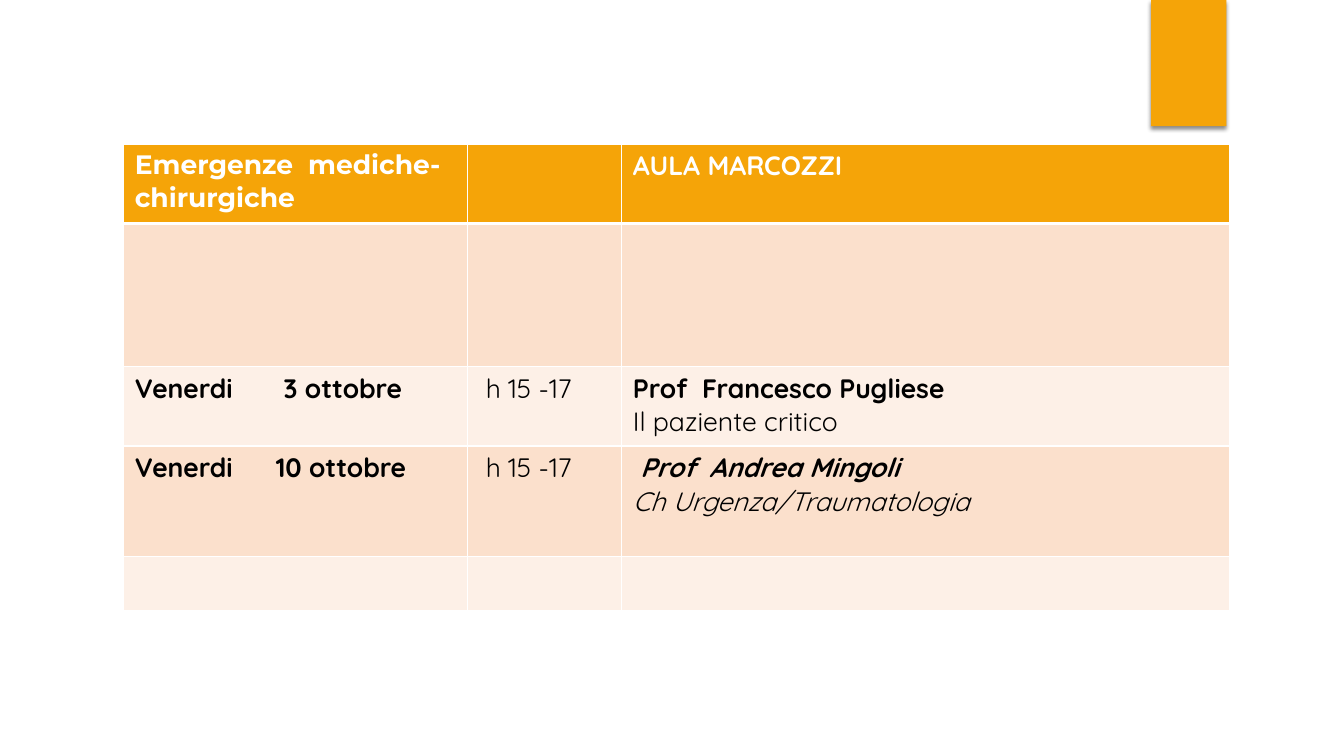
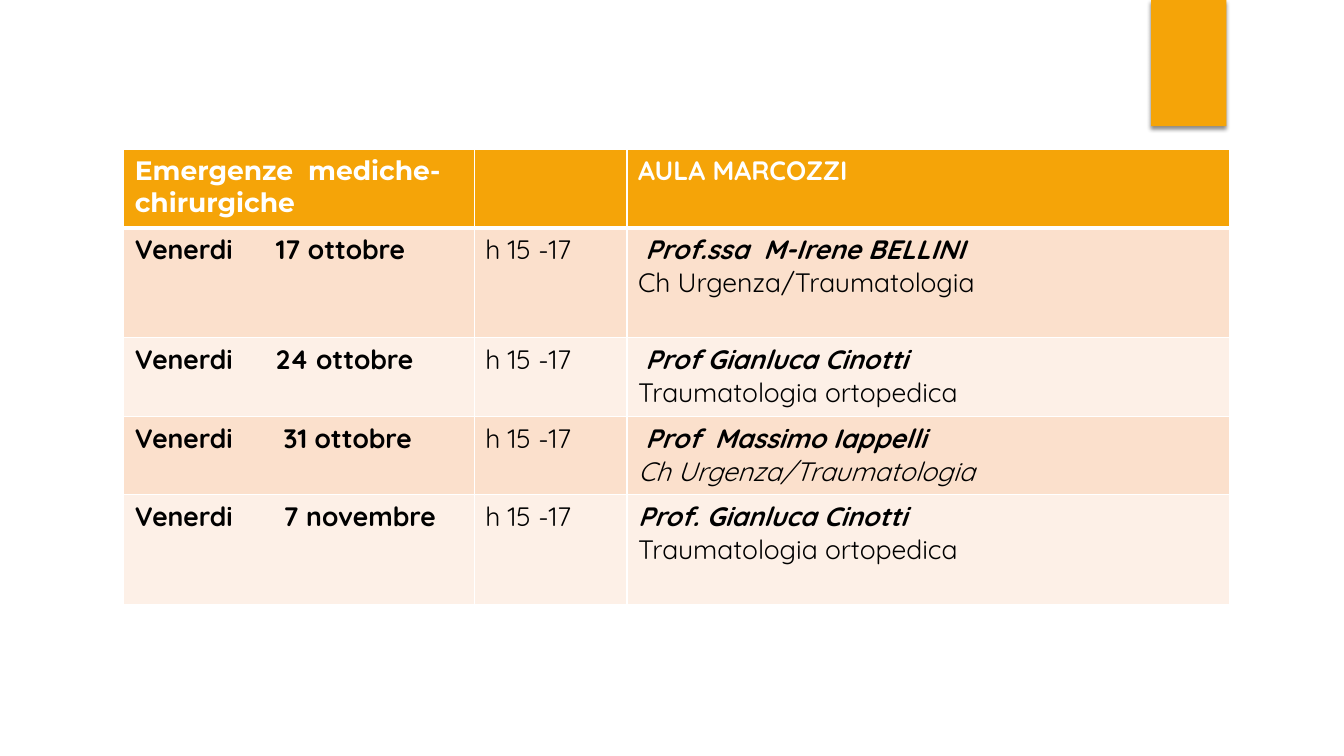
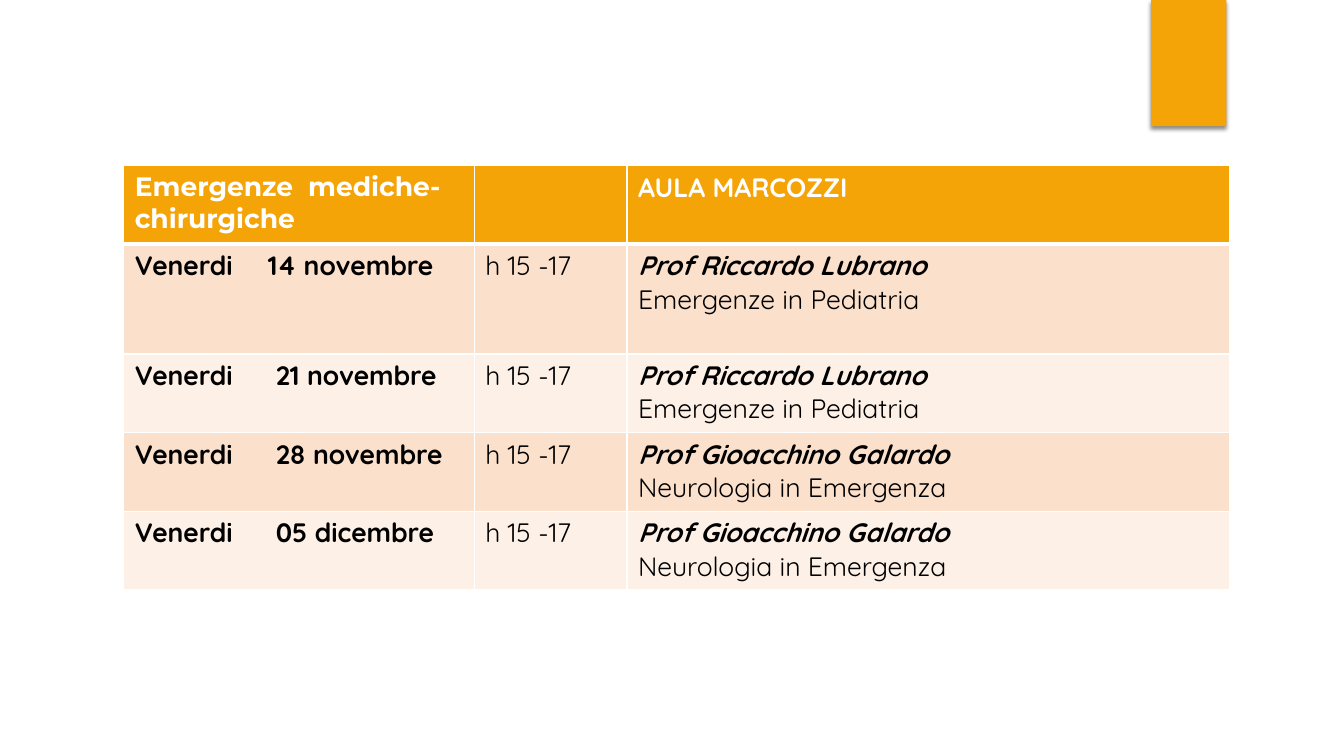
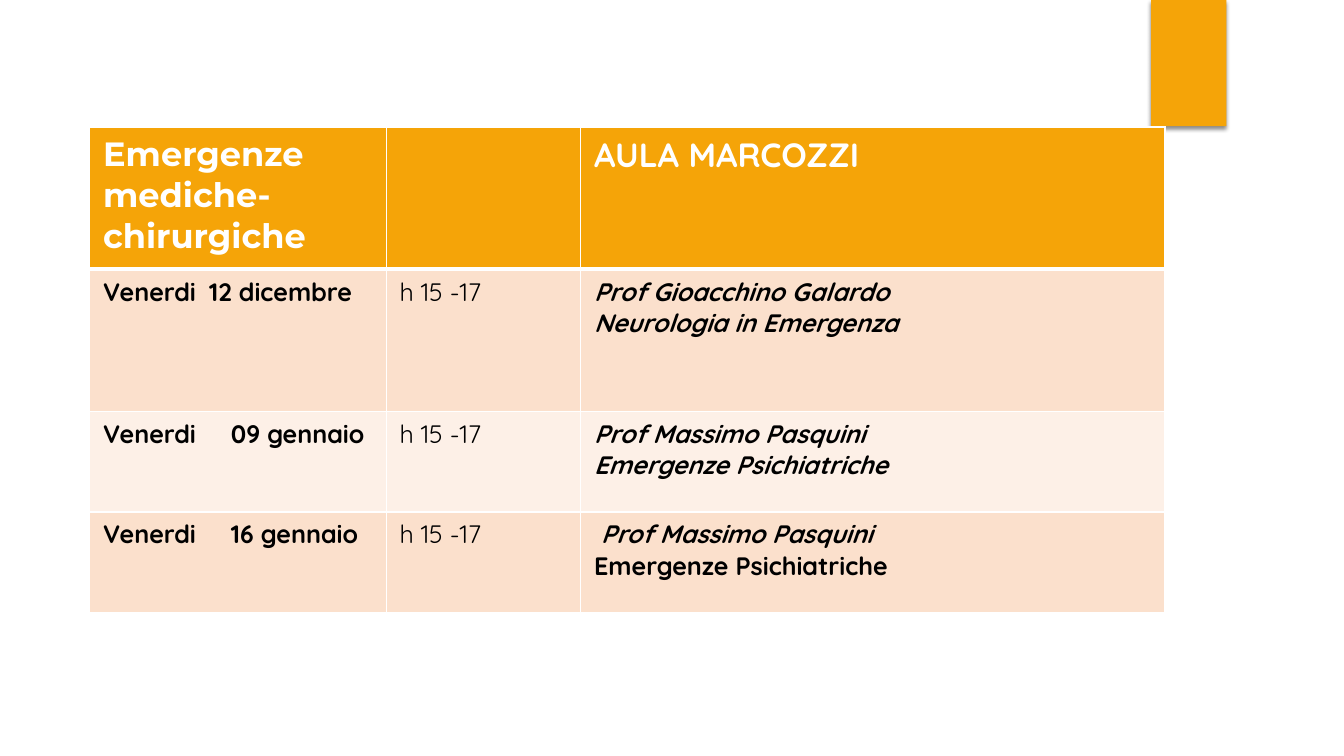
from dataclasses import dataclass

from pptx import Presentation
from pptx.dml.color import RGBColor
from pptx.enum.shapes import MSO_SHAPE as Shape
from pptx.oxml import parse_xml
from pptx.oxml.ns import nsdecls, qn
from pptx.util import Cm, Pt


@dataclass(frozen=True)
class Theme:
    accent: str = "F5A408"
    bands: tuple = ("FBE0CC", "FDF0E7")
    white: str = "FFFFFF"
    black: str = "000000"
    heading_font: str = "Montserrat"
    body_font: str = "Quicksand"
    thin: float = 1
    thick: float = 3


@dataclass(frozen=True)
class Grid:
    left: float
    top: float
    columns: tuple
    heading_size: int = 19
    body_size: int = 19
    inset_x: float = 0.28
    inset_y: float = 0.13


THEME = Theme()

# Content: lengths in cm; styles are b (bold), i (italic), both or neither
COURSE = "Emergenze  mediche-chirurgiche"
ROOM = "AULA MARCOZZI"
HOURS = "h 15 -17"
EMPTY = None

# Lesson: row height, date, position of the day, hours, (teacher, style), (topic, style)
SCHEDULES = [
    (Grid(3.12, 3.63, (8.66, 3.89, 15.32)), 2, [
        (3.61, EMPTY),
        (2, ("3 ottobre", 3.75, " " + HOURS,
             ("Prof  Francesco Pugliese", "b"), ("Il paziente critico", ""))),
        (2.79, ("10 ottobre", 3.55, " " + HOURS,
                (" Prof  Andrea Mingoli", "bi"), ("Ch Urgenza/Traumatologia", "i"))),
        (1.35, EMPTY),
    ]),
    (Grid(3.12, 3.76, (8.83, 3.85, 15.18)), 1.98, [
        (2.77, ("17 ottobre", 3.55, HOURS,
                (" Prof.ssa  M-Irene BELLINI", "bi"), ("Ch Urgenza/Traumatologia", ""))),
        (1.98, ("24 ottobre", 3.55, HOURS,
                (" Prof Gianluca Cinotti", "bi"), ("Traumatologia ortopedica", ""))),
        (1.98, ("31 ottobre", 3.75, HOURS,
                (" Prof  Massimo Iappelli", "bi"), ("Ch Urgenza/Traumatologia", "i"))),
        (2.77, ("7 novembre", 3.75, HOURS,
                ("Prof. Gianluca Cinotti", "bi"), ("Traumatologia ortopedica", ""))),
    ]),
    (Grid(3.12, 4.17, (8.83, 3.85, 15.18)), 1.98, [
        (2.77, ("14 novembre", 3.35, HOURS,
                ("Prof Riccardo Lubrano", "bi"), ("Emergenze in Pediatria", ""))),
        (1.98, ("21 novembre", 3.55, HOURS,
                ("Prof Riccardo Lubrano", "bi"), ("Emergenze in Pediatria", ""))),
        (1.98, ("28 novembre", 3.55, HOURS,
                ("Prof Gioacchino Galardo", "bi"), ("Neurologia in Emergenza", ""))),
        (1.98, ("05 dicembre", 3.55, HOURS,
                ("Prof Gioacchino Galardo", "bi"), ("Neurologia in Emergenza", ""))),
    ]),
    (Grid(2.26, 3.2, (7.47, 4.9, 14.73), 24, 18, 0.34, 0.17), 3.58, [
        (3.58, ("12 dicembre", 2.67, HOURS,
                ("Prof Gioacchino Galardo", "bi"), ("Neurologia in Emergenza", "bi"))),
        (2.54, ("09 gennaio", 3.22, HOURS,
                ("Prof Massimo Pasquini", "bi"), ("Emergenze Psichiatriche", "bi"))),
        (2.54, ("16 gennaio", 3.22, HOURS,
                (" Prof Massimo Pasquini", "bi"), ("Emergenze Psichiatriche", "b"))),
    ]),
]


def rgb(colour):
    return RGBColor.from_string(colour)


def add_corner_block(slide):
    """Put the orange block on the slide's layout, so every slide shows it."""
    block = slide.shapes.add_shape(Shape.RECTANGLE, Cm(29.01), 0, Cm(1.9), Cm(3.18))
    block.fill.solid()
    block.fill.fore_color.rgb = rgb(THEME.accent)
    block.line.fill.background()
    block.shadow.inherit = False
    block.element.spPr.find(qn("a:effectLst")).append(parse_xml(
        f'<a:outerShdw {nsdecls("a")} blurRad="{Pt(3)}" dist="{Pt(2)}" dir="5400000" rotWithShape="0">'
        f'<a:srgbClr val="{THEME.black}"><a:alpha val="45000"/></a:srgbClr></a:outerShdw>'))
    slide.slide_layout.shapes.element.append(block.element)


def set_borders(cell, top, bottom):
    properties = cell._tc.get_or_add_tcPr()
    widths = (("L", THEME.thin), ("R", THEME.thin), ("T", top), ("B", bottom))
    for position, (side, width) in enumerate(widths):
        properties.insert(position, parse_xml(
            f'<a:ln{side} {nsdecls("a")} w="{Pt(width)}"><a:solidFill>'
            f'<a:srgbClr val="{THEME.white}"/></a:solidFill></a:ln{side}>'))


def write(cell, lines, size, colour, font, tab=None):
    for index, (text, style) in enumerate(lines):
        frame = cell.text_frame
        paragraph = frame.add_paragraph() if index else frame.paragraphs[0]
        paragraph.text = text
        if tab:
            paragraph._p.get_or_add_pPr().append(parse_xml(
                f'<a:tabLst {nsdecls("a")}><a:tab pos="{Cm(tab)}" algn="l"/></a:tabLst>'))
        paragraph.font.name = font
        paragraph.font.size = Pt(size)
        paragraph.font.color.rgb = rgb(colour)
        paragraph.font.bold = "b" in style
        paragraph.font.italic = "i" in style


def add_schedule(slide, grid, heading_height, lessons):
    heights = [heading_height] + [height for height, _ in lessons]
    schedule = slide.shapes.add_table(
        len(heights), len(grid.columns), Cm(grid.left), Cm(grid.top),
        Cm(sum(grid.columns)), Cm(sum(heights))).table
    schedule.horz_banding = False
    for column, width in zip(schedule.columns, grid.columns):
        column.width = Cm(width)

    # Row heights, fills, borders and insets
    for index, (row, height) in enumerate(zip(schedule.rows, heights)):
        row.height = Cm(height)
        for cell in row.cells:
            cell.fill.solid()
            cell.fill.fore_color.rgb = rgb(THEME.bands[(index - 1) % 2] if index else THEME.accent)
            set_borders(cell, THEME.thick if index == 1 else THEME.thin,
                        THEME.thin if index else THEME.thick)
            cell.margin_left = cell.margin_right = Cm(grid.inset_x)
            cell.margin_top = cell.margin_bottom = Cm(grid.inset_y)

    # Heading row
    for column, text, font in ((0, COURSE, THEME.heading_font), (2, ROOM, THEME.body_font)):
        write(schedule.cell(0, column), [(text, "b")], grid.heading_size, THEME.white, font)

    # Lessons
    body = (grid.body_size, THEME.black, THEME.body_font)
    for index, (_, lesson) in enumerate(lessons, start=1):
        if lesson is EMPTY:
            continue
        date, day_tab, hours, teacher, topic = lesson
        write(schedule.cell(index, 0), [(f"Venerdi\t{date}", "b")], *body, tab=day_tab)
        write(schedule.cell(index, 1), [(hours, "")], *body)
        write(schedule.cell(index, 2), [teacher, topic], *body)


def main():
    deck = Presentation()
    deck.slide_width, deck.slide_height = Cm(33.87), Cm(19.05)
    blank = deck.slide_layouts[6]
    for number, (grid, heading_height, lessons) in enumerate(SCHEDULES):
        slide = deck.slides.add_slide(blank)
        if number == 0:
            add_corner_block(slide)
        add_schedule(slide, grid, heading_height, lessons)
    deck.save("out.pptx")


if __name__ == "__main__":
    main()
